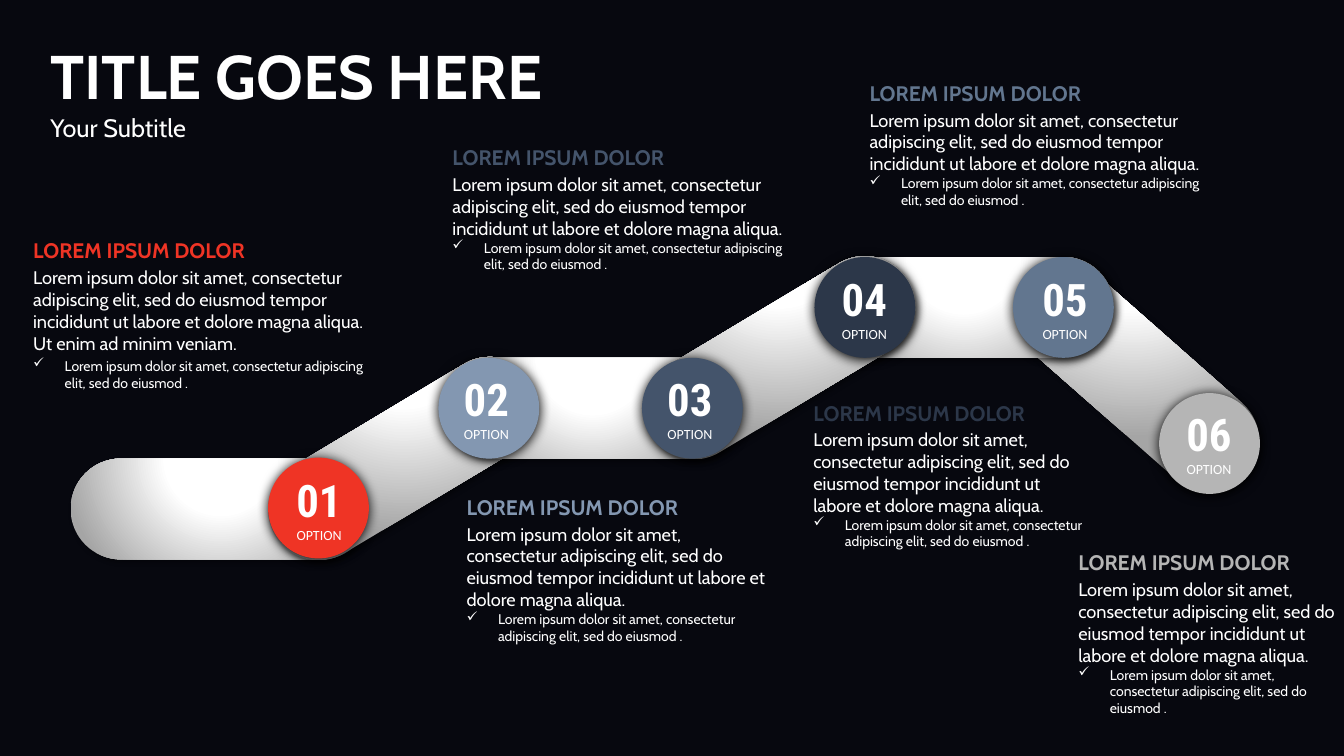
from lxml import etree
from pptx import Presentation
from pptx.dml.color import RGBColor
from pptx.enum.shapes import MSO_SHAPE as Preset
from pptx.enum.text import MSO_ANCHOR as Anchor, MSO_AUTO_SIZE as AutoSize, PP_ALIGN as Align
from pptx.oxml import parse_xml
from pptx.oxml.ns import nsdecls, qn
from pptx.util import Pt

WHITE = "FFFFFF"
HEADING = "LOREM IPSUM DOLOR"
BODY = ("Lorem ipsum dolor sit amet, consectetur adipiscing elit, sed do eiusmod "
        "tempor incididunt ut labore et dolore magna aliqua.")
BULLET = "Lorem ipsum dolor sit amet, consectetur adipiscing elit, sed do eiusmod ."
DIAMETER, BAR_LENGTH = 72, 214.6
SPACER = 2.4

# Bars of the path, back to front: left, top, rotation
BARS = [
    (50.4, 327.6, 0), (181.4, 291.6, 329.1), (316.1, 255.6, 0),
    (702.7, 231.8, 41.4), (581, 183.6, 0), (449.3, 219.6, 329.1),
]
# Options: colour, circle left and top, label left and top, note left, top and width
OPTIONS = [
    ("EF3425", (191.5, 326.9), (200.9, 335.5), (16.6, 166.3, 262)),
    ("8397B1", (313.2, 255.6), (320.4, 263.5), (326.2, 349.5, 227.5)),
    ("44546B", (458.6, 255.6), (465.8, 263.5), (316.1, 100, 262)),
    ("2C3749", (581.8, 183.6), (590.4, 192.2), (573.9, 282.2, 209)),
    ("62768F", (723.6, 183.6), (733.7, 192.2), (614, 53.8, 262)),
    ("B5B5B5", (828, 280.8), (836.6, 288), (763.2, 389.3, 202)),
]


def colour(value):
    return RGBColor.from_string(value)


def write(frame, text, size=13, font="Cabin", fill=WHITE, bold=False,
          align=Align.LEFT, before=0, bullet=None):
    """Fill the empty first paragraph of the frame, or add another one."""
    paragraph = frame.paragraphs[0]
    if paragraph.runs:
        paragraph = frame.add_paragraph()
    paragraph.alignment = align
    paragraph.space_before = Pt(before)
    if bullet:
        properties = paragraph._p.get_or_add_pPr()
        properties.set("marL", str(Pt(22.5)))
        properties.set("indent", str(-Pt(22.5)))
        etree.SubElement(properties, qn("a:buChar"), char=bullet)
    run = paragraph.add_run()
    run.text = text
    run.font.size = Pt(size)
    run.font.name = font
    run.font.bold = bold
    run.font.color.rgb = colour(fill)


def prepare(frame, side=7.2, edge=3.6):
    frame.word_wrap = True
    frame.auto_size = AutoSize.NONE
    frame.vertical_anchor = Anchor.TOP
    frame.margin_left = frame.margin_right = Pt(side)
    frame.margin_top = frame.margin_bottom = Pt(edge)
    return frame


def add_text_box(slide, left, top, width, height, **margins):
    shape = slide.shapes.add_textbox(Pt(left), Pt(top), Pt(width), Pt(height))
    return prepare(shape.text_frame, **margins)


def add_shadow(shape, opacity, blur, distance, angle):
    shape.shadow.inherit = False
    effects = shape._element.spPr.find(qn("a:effectLst"))
    effects.append(parse_xml(
        f'<a:outerShdw {nsdecls("a")} blurRad="{Pt(blur)}" dist="{Pt(distance)}" '
        f'dir="{angle * 60000}" algn="ctr" rotWithShape="0"><a:srgbClr val="000000">'
        f'<a:alpha val="{opacity * 1000}"/></a:srgbClr></a:outerShdw>'))


def add_bar(slide, left, top, rotation):
    bar = slide.shapes.add_shape(
        Preset.ROUNDED_RECTANGLE, Pt(left), Pt(top), Pt(BAR_LENGTH), Pt(DIAMETER))
    bar.adjustments[0] = 0.5
    bar.rotation = rotation
    bar.line.fill.background()
    stops = "".join(
        f'<a:gs pos="{position * 1000}"><a:srgbClr val="{value}"/></a:gs>'
        for position, value in [(0, WHITE), (35, WHITE), (100, "A5A5A5")])
    gradient = parse_xml(
        f'<a:gradFill {nsdecls("a")} rotWithShape="1"><a:gsLst>{stops}</a:gsLst>'
        '<a:path path="circle"><a:fillToRect l="50000" t="-80000" r="50000" b="180000"/>'
        '</a:path></a:gradFill>')
    bar._element.spPr.find(qn("a:prstGeom")).addnext(gradient)
    add_shadow(bar, opacity=40, blur=4, distance=3, angle=45)


def add_circle(slide, left, top, fill):
    circle = slide.shapes.add_shape(
        Preset.OVAL, Pt(left), Pt(top), Pt(DIAMETER), Pt(DIAMETER))
    circle.fill.solid()
    circle.fill.fore_color.rgb = colour(fill)
    circle.line.fill.background()
    add_shadow(circle, opacity=100, blur=8.5, distance=1, angle=90)


def add_label(slide, left, top, number):
    frame = add_text_box(slide, left, top, 54, 55.4, side=5, edge=2.2)
    write(frame, f"{number:02}", size=32, font="Roboto Condensed", bold=True,
          align=Align.CENTER)
    write(frame, "OPTION", size=10, font="Calibri", align=Align.CENTER)


def add_note(slide, left, top, width, fill, extra=""):
    frame = add_text_box(slide, left, top, width, 117 if extra else 115)
    write(frame, HEADING, size=15, fill=fill, bold=True)
    write(frame, BODY + extra, before=SPACER)
    write(frame, BULLET, size=10, before=SPACER if extra else 0, bullet="✓")


def add_title(slide):
    title = slide.shapes.title
    title.left, title.top, title.width, title.height = Pt(28.8), Pt(23.8), Pt(468), Pt(82)
    frame = prepare(title.text_frame)
    write(frame, "TITLE GOES HERE", size=44, bold=True)
    write(frame, "Your Subtitle", size=18)


def main():
    presentation = Presentation()
    presentation.slide_width, presentation.slide_height = Pt(960), Pt(540)
    slide = presentation.slides.add_slide(presentation.slide_layouts[5])
    slide.background.fill.solid()
    slide.background.fill.fore_color.rgb = colour("07080F")
    add_title(slide)

    # Path of bars, with the circles on its joints
    for bar in BARS:
        add_bar(slide, *bar)
    for fill, circle, _, _ in OPTIONS:
        add_circle(slide, *circle, fill)

    # Numbers and notes
    for number, (fill, _, label, note) in enumerate(OPTIONS, start=1):
        add_label(slide, *label, number)
        extra = " Ut enim ad minim veniam." if number == 1 else ""
        add_note(slide, *note, fill, extra)

    presentation.save("out.pptx")


if __name__ == "__main__":
    main()
